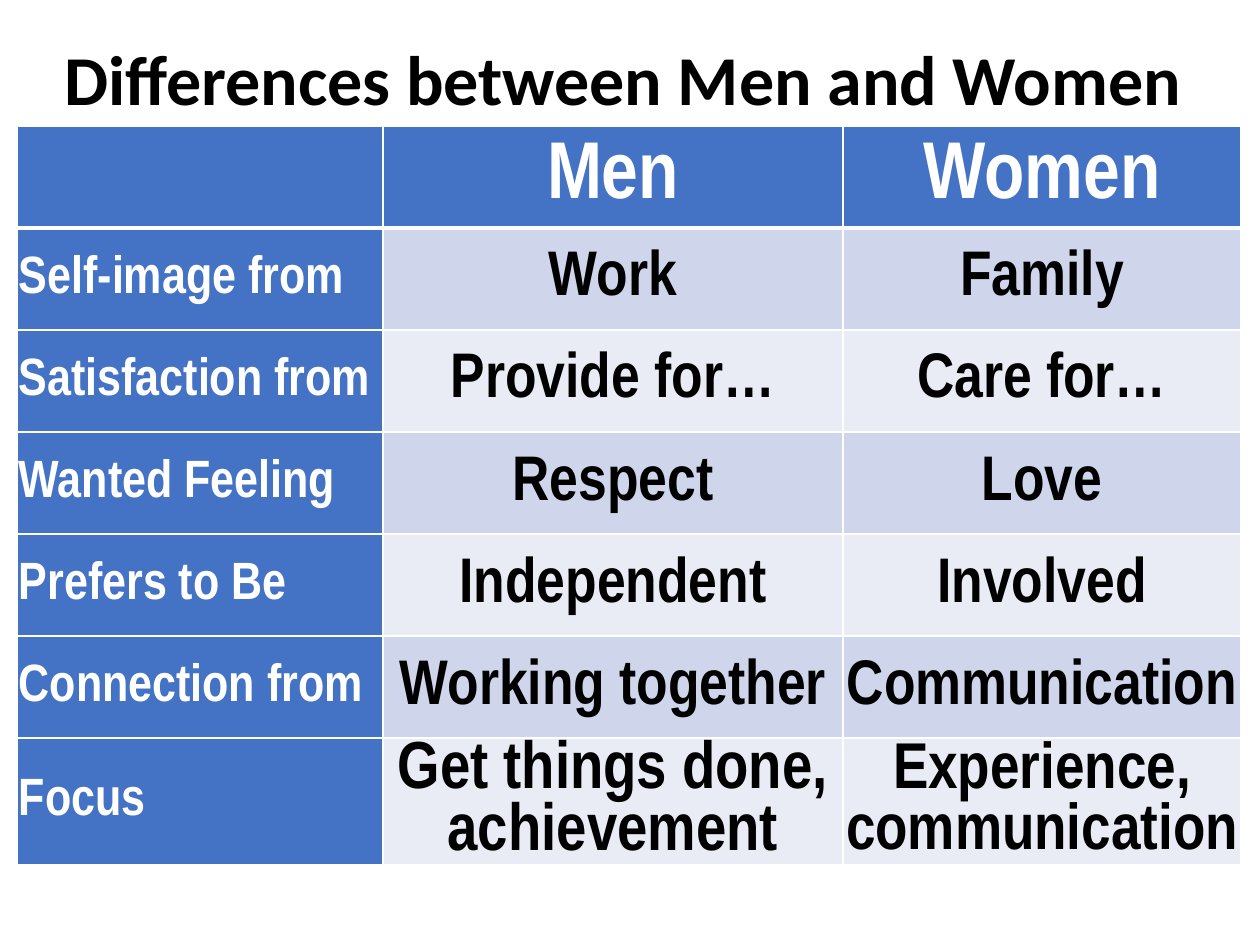
from typing import NamedTuple

from lxml import etree
from pptx import Presentation
from pptx.dml.color import RGBColor
from pptx.enum.text import MSO_ANCHOR, MSO_AUTO_SIZE, PP_ALIGN
from pptx.oxml.ns import qn
from pptx.util import Inches, Pt

LEFT, CENTER = PP_ALIGN.LEFT, PP_ALIGN.CENTER
MIDDLE = MSO_ANCHOR.MIDDLE
GROW = MSO_AUTO_SIZE.SHAPE_TO_FIT_TEXT

COLORS = {
    "header": "4472C4",
    "band_dark": "CFD5EA",
    "band_light": "E9EBF5",
    "white": "FFFFFF",
    "black": "000000",
}
COLUMN_WIDTHS = (2.9, 3.65, 3.16)
ROW_HEIGHT = 0.81
CELL_FORMAT = {
    "vertical_anchor": MIDDLE,
    "margin_left": Inches(0.01),
    "margin_right": Inches(0.01),
    "margin_top": Inches(0.01),
    "margin_bottom": Inches(0),
}


class Comparison(NamedTuple):
    topic: str
    men: str
    women: str
    men_size: int = 36
    women_size: int = 36


class CellStyle(NamedTuple):
    fill: str
    color: str
    size: int
    alignment: PP_ALIGN


COMPARISONS = (
    Comparison("Self-image from", "Work", "Family"),
    Comparison("Satisfaction from", "Provide for…", "Care for…"),
    Comparison("Wanted Feeling", "Respect", "Love"),
    Comparison("Prefers to Be", "Independent", "Involved"),
    Comparison("Connection from", "Working together", "Communication"),
    Comparison("Focus", "Get things done, achievement", "Experience, communication", 38, 37),
)
HEADER_STYLE = CellStyle("header", "white", 46, CENTER)
TOPIC_STYLE = CellStyle("header", "white", 30, LEFT)


def rgb(name: str) -> RGBColor:
    return RGBColor.from_string(COLORS[name])


def write_text(paragraph, text: str, font_name: str, size: int, color: str) -> None:
    run = paragraph.add_run()
    run.text = text
    for attribute, value in {"name": font_name, "size": Pt(size), "bold": True}.items():
        setattr(run.font, attribute, value)
    run.font.color.rgb = rgb(color)


def add_borders(cell, top: float, bottom: float) -> None:
    properties = cell._tc.get_or_add_tcPr()
    widths = {"a:lnL": 1, "a:lnR": 1, "a:lnT": top, "a:lnB": bottom}
    for index, (tag, width) in enumerate(widths.items()):
        line = etree.Element(qn(tag), w=str(Pt(width)))
        fill = etree.SubElement(line, qn("a:solidFill"))
        etree.SubElement(fill, qn("a:srgbClr"), val=COLORS["white"])
        properties.insert(index, line)


def fill_cell(cell, text: str, style: CellStyle, top: float = 1, bottom: float = 1) -> None:
    for attribute, value in CELL_FORMAT.items():
        setattr(cell, attribute, value)
    cell.fill.solid()
    cell.fill.fore_color.rgb = rgb(style.fill)
    add_borders(cell, top, bottom)
    if text:
        paragraph = cell.text_frame.paragraphs[0]
        paragraph.alignment = style.alignment
        write_text(paragraph, text, "Arial Narrow", style.size, style.color)


def add_comparison_table(slide) -> None:
    row_count = len(COMPARISONS) + 1
    table = slide.shapes.add_table(
        row_count, len(COLUMN_WIDTHS), Inches(0.14), Inches(1),
        Inches(sum(COLUMN_WIDTHS)), Inches(ROW_HEIGHT * row_count),
    ).table
    for column, width in zip(table.columns, COLUMN_WIDTHS):
        column.width = Inches(width)
    for row in table.rows:
        row.height = Inches(ROW_HEIGHT)
    for column_index, heading in enumerate(("", "Men", "Women")):
        fill_cell(table.cell(0, column_index), heading, HEADER_STYLE, bottom=3)
    for row_index, comparison in enumerate(COMPARISONS, start=1):
        band = "band_dark" if row_index % 2 else "band_light"
        top = 3 if row_index == 1 else 1
        entries = (
            (comparison.topic, TOPIC_STYLE),
            (comparison.men, CellStyle(band, "black", comparison.men_size, CENTER)),
            (comparison.women, CellStyle(band, "black", comparison.women_size, CENTER)),
        )
        for column_index, (text, style) in enumerate(entries):
            fill_cell(table.cell(row_index, column_index), text, style, top=top)


def add_title(slide) -> None:
    title = slide.shapes.add_textbox(Inches(0.41), Inches(0.23), Inches(9.18), Inches(0.77))
    frame = title.text_frame
    frame.word_wrap = False
    frame.auto_size = GROW
    write_text(frame.paragraphs[0], "Differences between Men and Women", "Calibri", 40, "black")


def main() -> None:
    presentation = Presentation()
    presentation.slide_width = Inches(10)
    presentation.slide_height = Inches(7.5)
    slide = presentation.slides.add_slide(presentation.slide_layouts[6])
    add_comparison_table(slide)
    add_title(slide)
    presentation.save("out.pptx")


if __name__ == "__main__":
    main()
